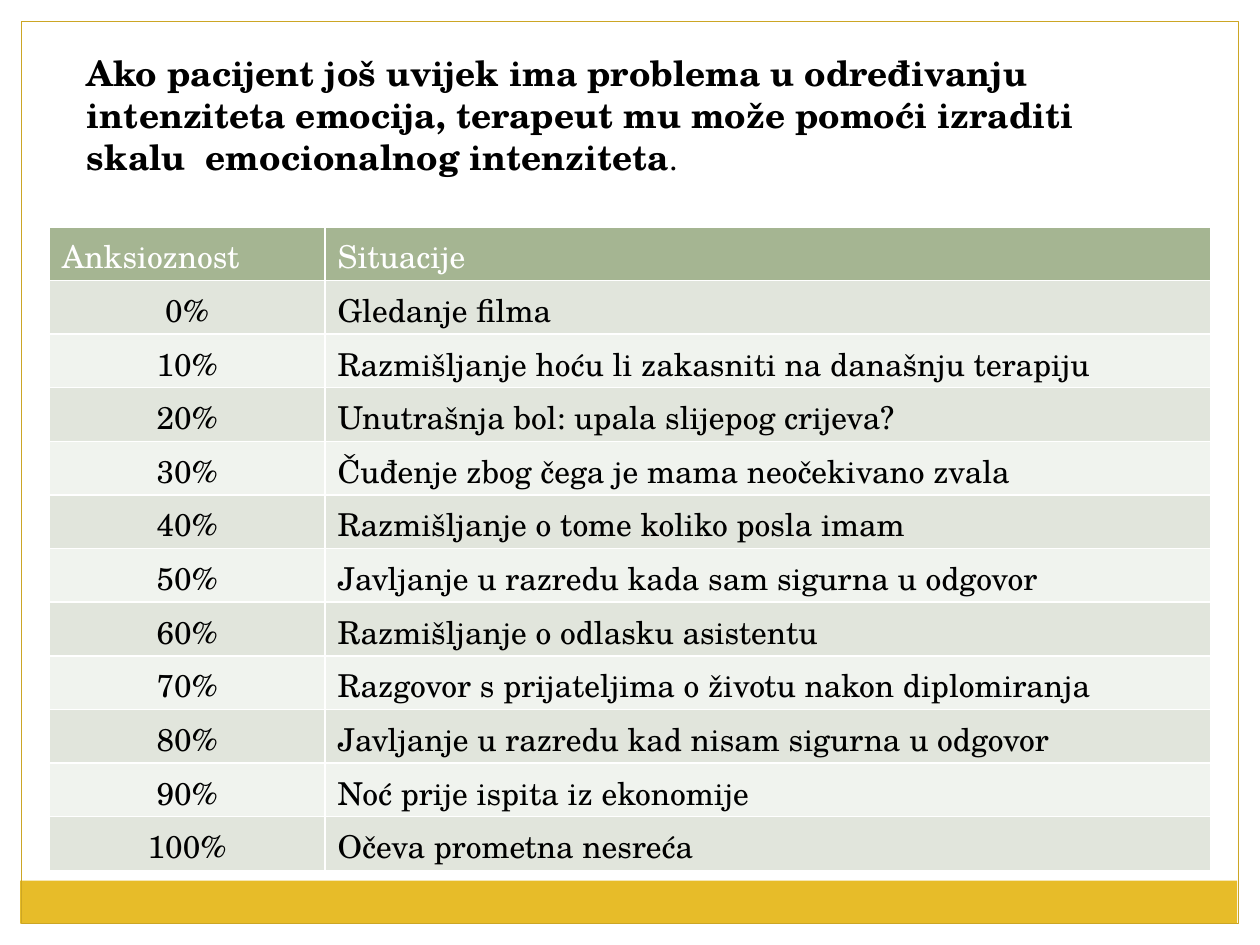
import pptx
import pptx.util
import pptx.dml.color
import pptx.enum.shapes
import pptx.enum.text
import pptx.oxml
import pptx.oxml.ns
from pptx.util import Inches, Pt

FONT = "TeX Gyre Schola"
GOLD, DARK_GOLD, WHITE, BLACK = "E7BC29", "CCA624", "FFFFFF", "000000"
HEADER_FILL, BAND_FILLS = "A5B592", ("E1E5DC", "F0F3EE")

# left, top, width, height, fill, line
BACKDROP = [
    (0, 0, 10, 0.17, WHITE, None),
    (9.83, 0, 0.17, 7.5, WHITE, None),
    (0, 0, 0.17, 7.5, WHITE, None),
    (0.16, 6.99, 9.66, 0.34, GOLD, None),
    (0.17, 0.17, 9.66, 7.16, None, DARK_GOLD),
]
TITLE_RUNS = [
    ("Ako pacijent još uvijek ima problema u određivanju intenziteta emocija, "
     "terapeut mu može pomoći izraditi skalu  emocionalnog intenziteta", 20, True),
    (".", 18, False),
]
HEADER = ("Anksioznost", "Situacije")
SITUATIONS = [
    "Gledanje filma",
    "Razmišljanje hoću li zakasniti na današnju terapiju",
    "Unutrašnja bol: upala slijepog crijeva?",
    "Čuđenje zbog čega je mama neočekivano zvala",
    "Razmišljanje o tome koliko posla imam",
    "Javljanje u razredu kada sam sigurna u odgovor",
    "Razmišljanje o odlasku asistentu",
    "Razgovor s prijateljima o životu nakon diplomiranja",
    "Javljanje u razredu kad nisam sigurna u odgovor",
    "Noć prije ispita iz ekonomije",
    "Očeva prometna nesreća",
]
COLUMN_WIDTHS = (2.19, 7.03)
TABLE_HEIGHT = 5.11


def rgb(code):
    return pptx.dml.color.RGBColor.from_string(code)


def add_run(para, text, size, color, bold=False):
    span = para.add_run()
    span.text = text
    span.font.name = FONT
    span.font.size = Pt(size)
    span.font.bold = bold
    span.font.color.rgb = rgb(color)


def add_rectangle(slide, left, top, width, height, fill, line):
    shape = slide.shapes.add_shape(
        pptx.enum.shapes.MSO_SHAPE.RECTANGLE,
        Inches(left), Inches(top), Inches(width), Inches(height))
    shape.shadow.inherit = False
    if fill:
        shape.fill.solid()
        shape.fill.fore_color.rgb = rgb(fill)
    else:
        shape.fill.background()
    if line:
        shape.line.color.rgb = rgb(line)
        shape.line.width = Pt(0.75)
    else:
        shape.line.fill.background()


def set_borders(cell, color):
    """Draw 1 pt borders on all four sides of the cell."""
    properties = cell._tc.get_or_add_tcPr()
    for index, tag in enumerate(("lnL", "lnR", "lnT", "lnB")):
        properties.insert(index, pptx.oxml.parse_xml(
            f'<a:{tag} {pptx.oxml.ns.nsdecls("a")} w="{Pt(1)}">'
            f'<a:solidFill><a:srgbClr val="{color}"/></a:solidFill></a:{tag}>'))


def fill_title(title):
    title.left, title.top = Inches(0.59), Inches(0.36)
    title.width, title.height = Inches(8.19), Inches(1.11)
    frame = title.text_frame
    frame.word_wrap = True
    frame.auto_size = pptx.enum.text.MSO_AUTO_SIZE.SHAPE_TO_FIT_TEXT
    frame.vertical_anchor = pptx.enum.text.MSO_ANCHOR.TOP
    para = frame.paragraphs[0]
    para.alignment = pptx.enum.text.PP_ALIGN.LEFT
    for text, size, bold in TITLE_RUNS:
        add_run(para, text, size, BLACK, bold)


def add_scale_table(slide):
    rows = [HEADER] + [(f"{10 * step}%", text) for step, text in enumerate(SITUATIONS)]
    table = slide.shapes.add_table(
        len(rows), len(COLUMN_WIDTHS), Inches(0.39), Inches(1.8),
        Inches(sum(COLUMN_WIDTHS)), Inches(TABLE_HEIGHT)).table
    for column, width in zip(table.columns, COLUMN_WIDTHS):
        column.width = Inches(width)
    for r, row in enumerate(rows):
        is_header = r == 0
        for c, text in enumerate(row):
            cell = table.cell(r, c)
            cell.fill.solid()
            cell.fill.fore_color.rgb = rgb(HEADER_FILL if is_header else BAND_FILLS[(r - 1) % 2])
            set_borders(cell, WHITE)
            para = cell.text_frame.paragraphs[0]
            if c == 0 and not is_header:
                para.alignment = pptx.enum.text.PP_ALIGN.CENTER
            add_run(para, text, 18, WHITE if is_header else BLACK)


def main():
    deck = pptx.Presentation()
    deck.slide_width, deck.slide_height = Inches(10), Inches(7.5)
    slide = deck.slides.add_slide(deck.slide_layouts[5])
    for rectangle in BACKDROP:
        add_rectangle(slide, *rectangle)
    fill_title(slide.shapes.title)
    add_scale_table(slide)
    deck.save("out.pptx")


if __name__ == "__main__":
    main()
